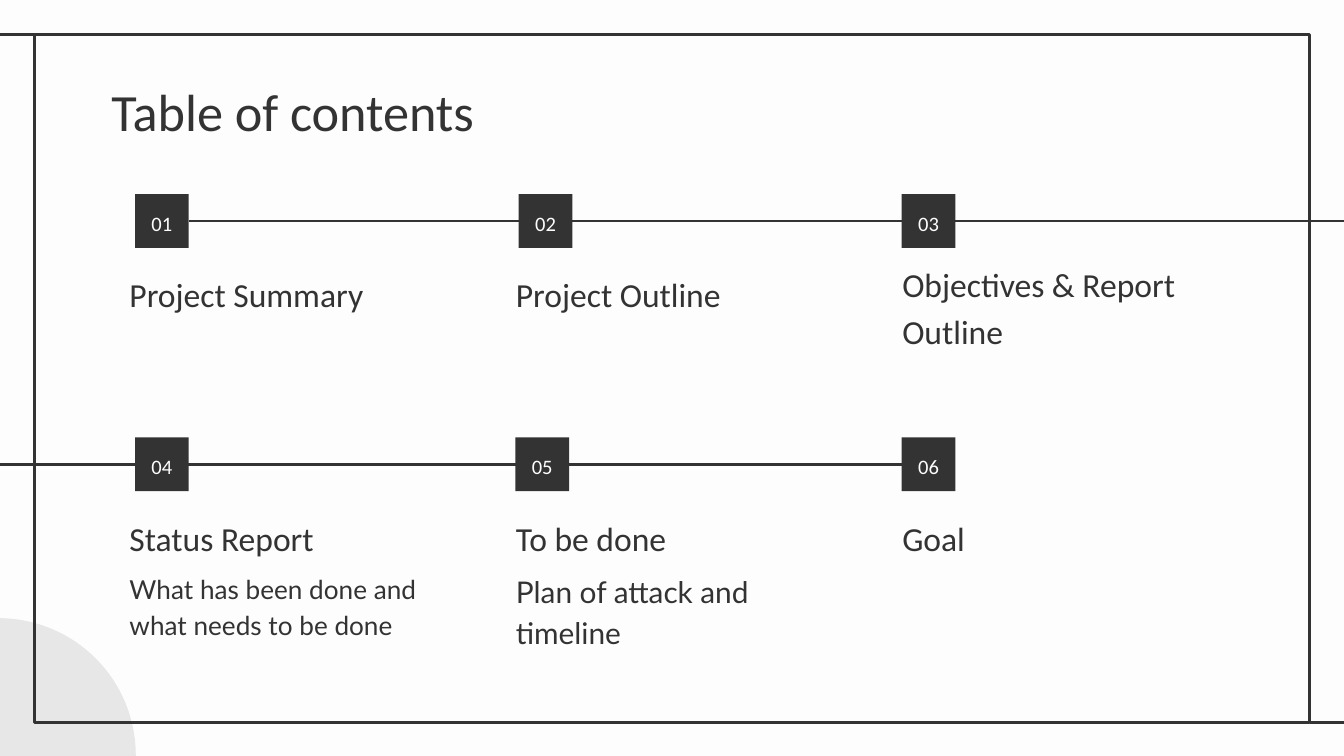
from lxml import etree
from pptx import Presentation
from pptx import util as u
from pptx.dml.color import RGBColor
from pptx.enum import shapes, text
from pptx.oxml.ns import qn

SCALE = 4572
WIDTH, HEIGHT = 2000, 1125
INK, PAPER, SHADE = "333333", "FDFDFD", "E8E7E7"
BADGE = 80
TOP, MIDDLE, BOTTOM = text.MSO_ANCHOR.TOP, text.MSO_ANCHOR.MIDDLE, text.MSO_ANCHOR.BOTTOM


def px(*lengths):
    """Turn px lengths into EMU."""
    return [u.Emu(length * SCALE) for length in lengths]


def paint(color_format, color):
    """Give a fill, line or font colour its hex value."""
    color_format.rgb = RGBColor.from_string(color)


def add_block(slide, kind, box, fill=None, line=None):
    """Add a preset shape with an optional fill and outline."""
    shape = slide.shapes.add_shape(kind, *px(*box))
    shape.shadow.inherit = False
    if fill:
        shape.fill.solid()
        paint(shape.fill.fore_color, fill)
    else:
        shape.fill.background()
    if line:
        paint(shape.line.color, line)
        shape.line.width = u.Pt(1.5)
    else:
        shape.line.fill.background()
    return shape


def add_rule(slide, start, end, y):
    """Add a horizontal line without a shadow."""
    rule = slide.shapes.add_connector(shapes.MSO_CONNECTOR.STRAIGHT, *px(start, y, end, y))
    paint(rule.line.color, INK)
    rule.line.width = u.Pt(1.5)
    etree.SubElement(rule._element.spPr, qn("a:effectLst"))
    return rule


def write(shape, words, size, font="Calibri", color=INK, anchor=TOP,
          align=text.PP_ALIGN.LEFT, spacing=1.15):
    """Fill a shape with one styled paragraph."""
    frame = shape.text_frame
    frame.word_wrap = True
    frame.vertical_anchor = anchor
    frame.margin_left = frame.margin_right = frame.margin_top = frame.margin_bottom = px(20)[0]
    paragraph = frame.paragraphs[0]
    paragraph.text = words
    paragraph.alignment = align
    paragraph.line_spacing = spacing
    paragraph.font.size = u.Pt(size)
    paragraph.font.name = font
    paint(paragraph.font.color, color)


def add_text(slide, box, words, size, **style):
    """Add a text box with one paragraph."""
    write(slide.shapes.add_textbox(*px(*box)), words, size, **style)


def add_frame(slide, left, top, width, height):
    """Draw the corner disc and the border whose ends run off the slide."""
    add_block(slide, shapes.MSO_SHAPE.OVAL, (left - 257, top + 869, 408, 408), fill=SHADE)
    add_block(slide, shapes.MSO_SHAPE.RECTANGLE, (left, top, width, height), line=INK)
    add_rule(slide, left, 0, top)
    add_rule(slide, left + width, WIDTH, top + height)


def add_entry(slide, left, top, number, indent, heading, size, body, body_size):
    """Place a numbered badge, its heading and its body, and return the badge."""
    badge = add_block(slide, shapes.MSO_SHAPE.RECTANGLE,
                      (left + indent, top, BADGE, BADGE), fill=INK)
    write(badge, number, 11, color=PAPER, anchor=MIDDLE, align=text.PP_ALIGN.CENTER)
    add_text(slide, (left, top + 115, *size), heading, 18, anchor=BOTTOM)
    if body:
        add_text(slide, (left, top + 175, 504, 126), body, body_size, font="Lato")
    return badge


def add_row(slide, top, start, end, entries, joined, side):
    """Place a row of entries on a line that starts at one badge."""
    rule = add_rule(slide, start, end, top + BADGE // 2)
    badges = [add_entry(slide, left, top, *entry)
              for left, entry in zip((173, 748, 1323), entries)]
    rule.begin_connect(badges[joined], side)


def main():
    """Build and save the contents slide."""
    presentation = Presentation()
    presentation.slide_width, presentation.slide_height = px(WIDTH, HEIGHT)
    slide = presentation.slides.add_slide(presentation.slide_layouts[6])
    slide.background.fill.solid()
    paint(slide.background.fill.fore_color, PAPER)
    add_frame(slide, 51, 51, 1898, 1024)
    add_text(slide, (146, 98, 1686, 126), "Table of contents", 28, spacing=1.0)
    line, lines = (504, 84), (602, 138)
    add_row(slide, 289, 281, WIDTH, [
        ("01", 28, "Project Summary", line, None, None),
        ("02", 24, "Project Outline", line, None, None),
        ("03", 19, "Objectives & Report Outline", lines, None, None),
    ], joined=0, side=3)
    add_row(slide, 651, 1342, 0, [
        ("04", 28, "Status Report", line, "What has been done and what needs to be done", 14),
        ("05", 19, "To be done", line, "Plan of attack and timeline", 16),
        ("06", 19, "Goal", line, None, None),
    ], joined=2, side=1)
    presentation.save("out.pptx")


if __name__ == "__main__":
    main()
